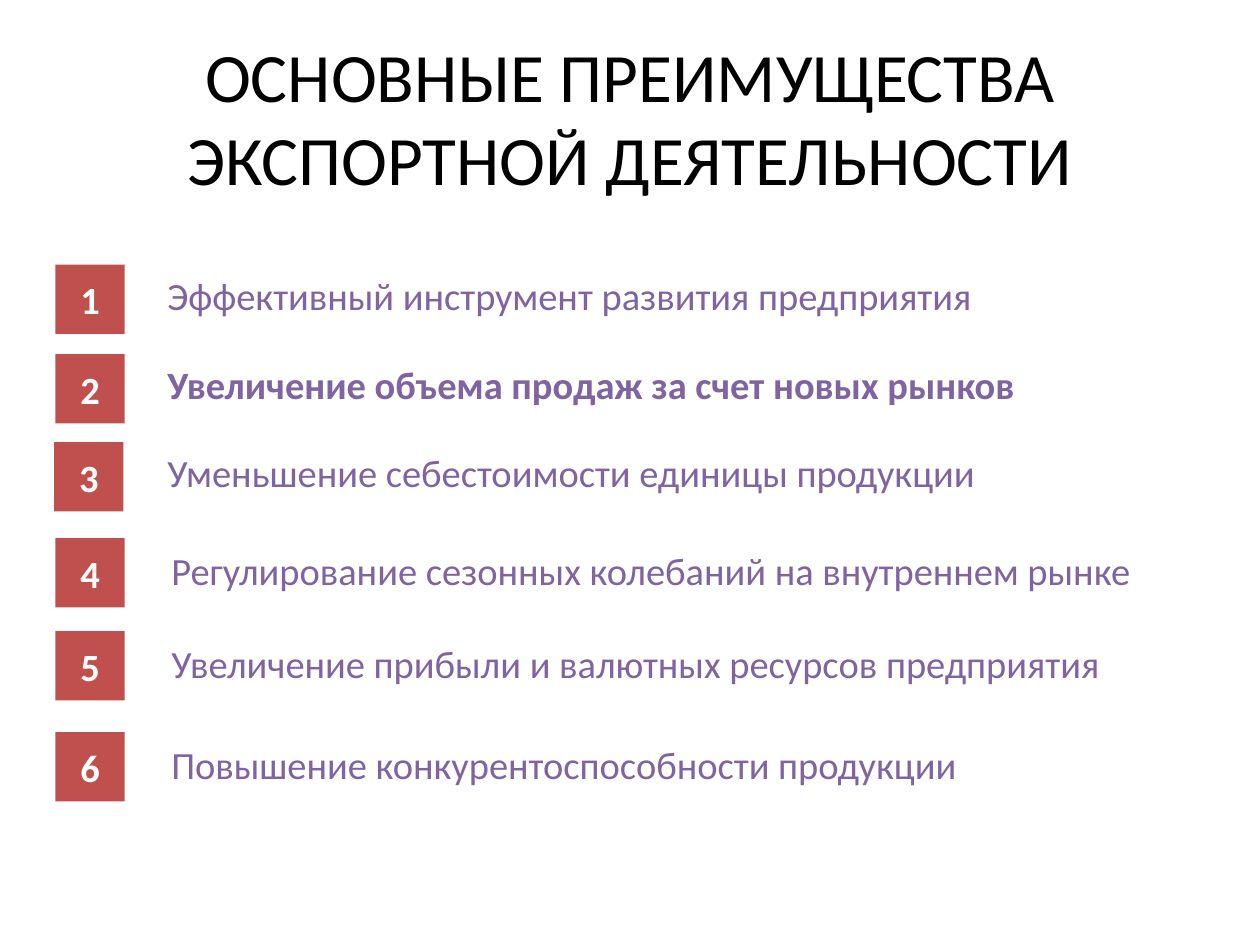
from pptx import Presentation
from pptx.dml.color import RGBColor
from pptx.enum.shapes import MSO_SHAPE
from pptx.enum.text import MSO_ANCHOR, MSO_AUTO_SIZE, PP_ALIGN
from pptx.util import Pt

RECTANGLE = MSO_SHAPE.RECTANGLE
MIDDLE = MSO_ANCHOR.MIDDLE
CENTER, LEFT = PP_ALIGN.CENTER, PP_ALIGN.LEFT
FIT_SHAPE, NO_FIT = MSO_AUTO_SIZE.SHAPE_TO_FIT_TEXT, MSO_AUTO_SIZE.NONE

PX = 9144  # 100 px to the inch
BADGE_SIZE = 55
RED, PURPLE, WHITE, BLACK = "C0504D", "8064A2", "FFFFFF", "000000"


def color(hex_value):
    return RGBColor.from_string(hex_value)


def write(frame, text, size, hex_value, align, bold=False):
    frame.word_wrap = True
    paragraph = frame.paragraphs[0]
    paragraph.text = text
    paragraph.alignment = align
    font = paragraph.runs[0].font
    font.name, font.size, font.bold = "Calibri", Pt(size), bold
    font.color.rgb = color(hex_value)
    return paragraph


prs = Presentation()
prs.slide_width, prs.slide_height = 1000 * PX, 750 * PX
slide = prs.slides.add_slide(prs.slide_layouts[5])

# Title
title = slide.shapes.title
title.left, title.top, title.width, title.height = 50 * PX, 30 * PX, 900 * PX, 125 * PX
title.text_frame.auto_size = NO_FIT
title.text_frame.vertical_anchor = MIDDLE
write(title.text_frame, "ОСНОВНЫЕ ПРЕИМУЩЕСТВА ЭКСПОРТНОЙ ДЕЯТЕЛЬНОСТИ", 39.6, BLACK, CENTER)

# Advantages: badge left, badge top, label width, has margins, bold, wording
advantages = [
    (44, 210, 795, True, False, "Эффективный инструмент развития предприятия"),
    (44, 281, 780, True, True, "Увеличение объема продаж за счет новых рынков"),
    (43, 351, 726, True, False, "Уменьшение себестоимости единицы продукции"),
    (44, 427, 850, False, False, "Регулирование сезонных колебаний на внутреннем рынке"),
    (44, 501, 830, False, False, "Увеличение прибыли и валютных ресурсов предприятия"),
    (44, 581, 830, False, False, "Повышение конкурентоспособности продукции"),
]

for number, (left, top, width, has_margins, bold, wording) in enumerate(advantages, 1):
    # Numbered badge
    badge = slide.shapes.add_shape(
        RECTANGLE, left * PX, top * PX, BADGE_SIZE * PX, BADGE_SIZE * PX)
    badge.shadow.inherit = False
    badge.fill.solid()
    badge.fill.fore_color.rgb = color(RED)
    badge.line.fill.background()
    badge.text_frame.vertical_anchor = MIDDLE
    write(badge.text_frame, str(number), 22, WHITE, CENTER, bold=True)

    # Advantage beside its badge
    label_left, label_drop, height = (123, 5, 43) if has_margins else (136, 11, 33)
    label = slide.shapes.add_textbox(
        label_left * PX, (top + label_drop) * PX, width * PX, height * PX)
    frame = label.text_frame
    if not has_margins:
        frame.margin_left = frame.margin_top = frame.margin_right = frame.margin_bottom = 0
    frame.auto_size = FIT_SHAPE
    paragraph = write(frame, wording, 22, PURPLE, LEFT, bold)
    paragraph.line_spacing = 0.9
    paragraph.space_after = Pt(7.7)

prs.save("out.pptx")
